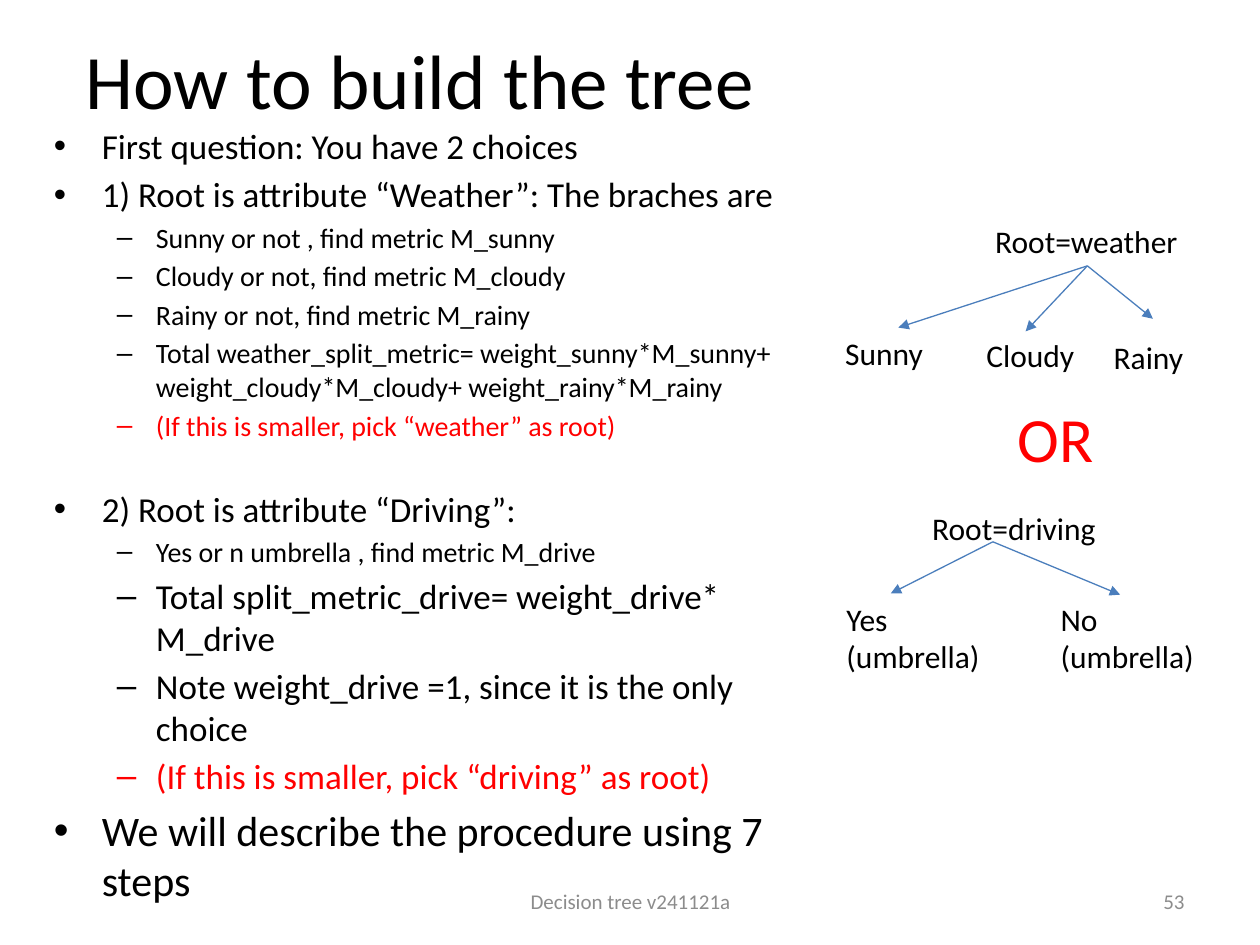
from dataclasses import dataclass

from lxml.etree import SubElement
from pptx import Presentation
from pptx.dml.color import RGBColor as RGB
from pptx.enum.shapes import MSO_CONNECTOR as Connector
from pptx.enum.text import MSO_ANCHOR as Anchor, MSO_AUTO_SIZE as AutoSize, PP_ALIGN as Align
from pptx.oxml.ns import qn
from pptx.util import Inches, Pt


@dataclass(frozen=True)
class Theme:
    font: str = "Calibri"
    ink: str = "000000"
    accent: str = "FF0000"
    muted: str = "8C8C8C"
    branch: str = "4B7EBC"
    title: int = 44
    choice: int = 36
    closing: int = 24
    point: int = 20
    label: int = 18
    detail: int = 16
    footer: int = 12
    line: float = 0.75


THEME = Theme()
BULLETS = (("•", 0.38, -0.38), ("–", 0.81, -0.31))
GAP_RATIO = 0.18
SECTION_GAP = 22.4


def write(paragraph, text, size=THEME.label, color=THEME.ink, align=Align.LEFT):
    paragraph.alignment = align
    run = paragraph.add_run()
    run.text = text
    run.font.name = THEME.font
    run.font.size = Pt(size)
    run.font.color.rgb = RGB.from_string(color)


class SlideBuilder:
    def __init__(self, slide, theme):
        self.slide = slide
        self.theme = theme

    def title(self, text, left, top, width, height):
        heading = self.slide.shapes.title
        heading.left, heading.top = Inches(left), Inches(top)
        heading.width, heading.height = Inches(width), Inches(height)
        heading.text_frame.vertical_anchor = Anchor.MIDDLE
        write(heading.text_frame.paragraphs[0], text, size=self.theme.title)

    def text(self, lines, left, top, width, height, wrap=False, anchor=Anchor.TOP, **style):
        box = self.slide.shapes.add_textbox(
            Inches(left), Inches(top), Inches(width), Inches(height))
        frame = box.text_frame
        frame.word_wrap = wrap
        frame.auto_size = AutoSize.NONE if wrap else AutoSize.SHAPE_TO_FIT_TEXT
        frame.vertical_anchor = anchor
        for index, line in enumerate(lines):
            paragraph = frame.add_paragraph() if index else frame.paragraphs[0]
            write(paragraph, line, **style)
        return box

    def outline(self, items, left, top, width, height):
        box = self.slide.shapes.add_textbox(
            Inches(left), Inches(top), Inches(width), Inches(height))
        frame = box.text_frame
        frame.word_wrap = True
        for index, (level, text, size, color, extra_gap) in enumerate(items):
            paragraph = frame.add_paragraph() if index else frame.paragraphs[0]
            write(paragraph, text, size=size, color=color)
            paragraph.level = level
            paragraph.space_before = Pt(size * GAP_RATIO + extra_gap)
            self.bullet(paragraph, *BULLETS[level])

    def bullet(self, paragraph, mark, margin, indent):
        properties = paragraph._p.get_or_add_pPr()
        properties.set("marL", str(Inches(margin)))
        properties.set("indent", str(Inches(indent)))
        SubElement(properties, qn("a:buFont"), typeface="Arial")
        SubElement(properties, qn("a:buChar"), char=mark)

    def arrow(self, start, end, source=None):
        branch = self.slide.shapes.add_connector(
            Connector.STRAIGHT, *(Inches(value) for value in (*start, *end)))
        if source is not None:
            branch.begin_connect(source, 2)
        branch.line.color.rgb = RGB.from_string(self.theme.branch)
        branch.line.width = Pt(self.theme.line)
        SubElement(branch.line._get_or_add_ln(), qn("a:tailEnd"), type="triangle")
        SubElement(branch._element.spPr, qn("a:effectLst"))


def main():
    deck = Presentation()
    deck.slide_width, deck.slide_height = Inches(10), Inches(7.5)
    builder = SlideBuilder(deck.slides.add_slide(deck.slide_layouts[5]), THEME)
    point, detail, ink, red = THEME.point, THEME.detail, THEME.ink, THEME.accent

    builder.title("How to build the tree", 0.58, 0, 9, 1.25)
    builder.outline([
        (0, "First question: You have 2 choices", point, ink, 0),
        (0, "1) Root is attribute “Weather”: The braches are", point, ink, 0),
        (1, "Sunny or not , find metric M_sunny", detail, ink, 0),
        (1, "Cloudy or not, find metric M_cloudy", detail, ink, 0),
        (1, "Rainy or not, find metric M_rainy", detail, ink, 0),
        (1, "Total weather_split_metric= weight_sunny*M_sunny+ "
            "weight_cloudy*M_cloudy+ weight_rainy*M_rainy", detail, ink, 0),
        (1, "(If this is smaller, pick “weather” as root)", detail, red, 0),
        (0, "2) Root is attribute “Driving”:", point, ink, SECTION_GAP),
        (1, "Yes or n umbrella , find metric M_drive", detail, ink, 0),
        (1, "Total split_metric_drive= weight_drive* M_drive", point, ink, 0),
        (1, "Note weight_drive =1, since it is the only choice", point, ink, 0),
        (1, "(If this is smaller, pick “driving” as root)", point, red, 0),
        (0, "We will describe the procedure using 7 steps", THEME.closing, ink, 0),
    ], 0.33, 0.94, 6.03, 6.01)

    for text, left, width, align in (
        ("Decision tree v241121a", 3.42, 3.17, Align.CENTER),
        ("53", 7.17, 2.33, Align.RIGHT),
    ):
        builder.text([text], left, 6.95, width, 0.4, wrap=True, anchor=Anchor.MIDDLE,
                     size=THEME.footer, color=THEME.muted, align=align)

    weather_root = builder.text(["Root=weather"], 7.8, 1.71, 1.66, 0.4)
    for branch_end in ((8.14, 2.63), (7.13, 2.6), (9.15, 2.53)):
        builder.arrow((8.63, 2.11), branch_end, source=weather_root)
    for branch_end in ((7.07, 4.71), (8.89, 4.72)):
        builder.arrow((7.88, 4.3), branch_end)

    for lines, left, top, width, height in (
        (["Sunny"], 6.61, 2.6, 0.83, 0.4),
        (["Cloudy"], 7.73, 2.62, 0.91, 0.4),
        (["Rainy"], 8.74, 2.63, 0.76, 0.4),
        (["Root=driving"], 7.3, 3.99, 1.51, 0.4),
        (["Yes", "(umbrella)"], 6.62, 4.71, 1.27, 0.71),
        (["No", "(umbrella)"], 8.32, 4.71, 1.27, 0.71),
    ):
        builder.text(lines, left, top, width, height)
    builder.text(["OR"], 7.98, 3.12, 0.81, 0.71, size=THEME.choice, color=red)

    deck.save("out.pptx")


if __name__ == "__main__":
    main()
